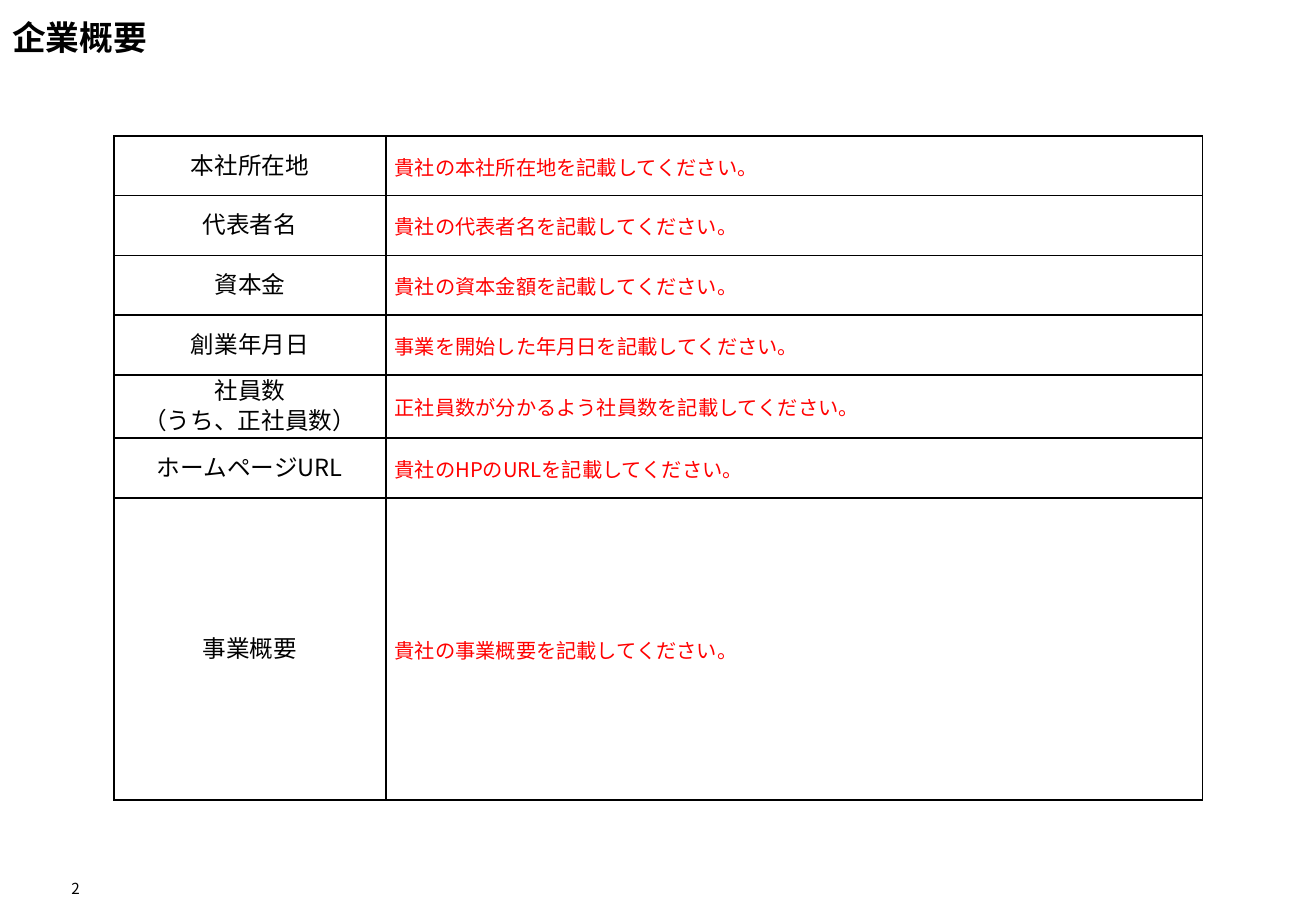
from lxml.etree import SubElement as Sub
from pptx import Presentation
from pptx.dml.color import RGBColor as Rgb
from pptx.enum.text import MSO_ANCHOR as Anchor, MSO_AUTO_SIZE as Fit, PP_ALIGN as Align
from pptx.oxml import parse_xml
from pptx.oxml.ns import nsdecls, qn
from pptx.util import Cm, Pt

FONT = "Noto Sans CJK JP"
COLORS = {"ink": "000000", "hint": "FF0000", "paper": "FFFFFF"}
TITLE = "企業概要"
ROW = 1.25
ROWS = [
    (ROW, ["本社所在地"], "貴社の本社所在地を記載してください。"),
    (ROW, ["代表者名"], "貴社の代表者名を記載してください。"),
    (ROW, ["資本金"], "貴社の資本金額を記載してください。"),
    (ROW, ["創業年月日"], "事業を開始した年月日を記載してください。"),
    (1.32, ["社員数", "（うち、正社員数）"], "正社員数が分かるよう社員数を記載してください。"),
    (ROW, ["ホームページURL"], "貴社のHPのURLを記載してください。"),
    (6.32, ["事業概要"], "貴社の事業概要を記載してください。"),
]
COLS = (5.69, 17.07)


class Deck:
    """Holds the style and the current slide."""

    def __init__(self, width, height):
        self.prs = Presentation()
        self.prs.slide_width, self.prs.slide_height = Cm(width), Cm(height)
        self.slide = self.prs.slides.add_slide(self.prs.slide_layouts[5])

    def text(self, frame, lines, size, color="ink", bold=False, align=Align.LEFT,
             lead=None, hang=0):
        """Fill a text frame, one paragraph a line; lead is in points, hang in cm."""
        for i, line in enumerate(lines):
            para = frame.add_paragraph() if i else frame.paragraphs[0]
            para.alignment = align
            if lead:
                para.line_spacing = Pt(lead)
            if hang:
                props = para._p.get_or_add_pPr()
                props.set("marL", str(Cm(hang)))
                props.set("indent", str(-Cm(hang)))
            run = para.add_run()
            run.text = line
            font = run.font
            font.size, font.bold, font.name = Pt(size), bold, FONT
            font.color.rgb = Rgb.from_string(COLORS[color])
            Sub(run._r.get_or_add_rPr(), qn("a:ea")).set("typeface", FONT)

    def title(self, text, left, top, width, height):
        box = self.slide.shapes.title
        box.left, box.top, box.width, box.height = map(Cm, (left, top, width, height))
        frame = box.text_frame
        frame.auto_size, frame.vertical_anchor = Fit.NONE, Anchor.MIDDLE
        self.text(frame, [text], 20, bold=True)

    def cell(self, cell, lines, size, **style):
        cell.fill.solid()
        cell.fill.fore_color.rgb = Rgb.from_string(COLORS["paper"])
        cell.vertical_anchor = Anchor.MIDDLE
        cell.margin_left = cell.margin_right = Cm(0.18)
        cell.margin_top = cell.margin_bottom = 0
        self.text(cell.text_frame, lines, size, lead=18, **style)
        props = cell._tc.get_or_add_tcPr()
        for i, side in enumerate("LRTB"):
            props.insert(i, parse_xml(
                f'<a:ln{side} {nsdecls("a")} w="{Pt(1)}"><a:solidFill>'
                f'<a:srgbClr val="{COLORS["ink"]}"/></a:solidFill></a:ln{side}>'))

    def table(self, rows, cols, left, top):
        high = sum(row[0] for row in rows)
        grid = self.slide.shapes.add_table(
            len(rows), len(cols), Cm(left), Cm(top), Cm(sum(cols)), Cm(high)).table
        grid.first_row = grid.horz_banding = False
        for col, width in zip(grid.columns, cols):
            col.width = Cm(width)
        for i, (height, label, hint) in enumerate(rows):
            grid.rows[i].height = Cm(height)
            self.cell(grid.cell(i, 0), label, 14, align=Align.CENTER, hang=0.38)
            self.cell(grid.cell(i, 1), [hint], 12, color="hint")

    def number(self, text, left, top, width, height):
        box = self.slide.shapes.add_textbox(*map(Cm, (left, top, width, height)))
        frame = box.text_frame
        frame.word_wrap, frame.vertical_anchor = False, Anchor.BOTTOM
        frame.margin_left = frame.margin_right = 0
        frame.margin_top = frame.margin_bottom = 0
        self.text(frame, [text], 9, align=Align.RIGHT)


def main():
    deck = Deck(27.51, 19.05)
    deck.title(TITLE, 0, 0, 23.72, 1.55)
    deck.table(ROWS, COLS, 2.38, 2.84)
    deck.number("2", 1.17, 18.29, 0.5, 0.48)
    deck.prs.save("out.pptx")


if __name__ == "__main__":
    main()
